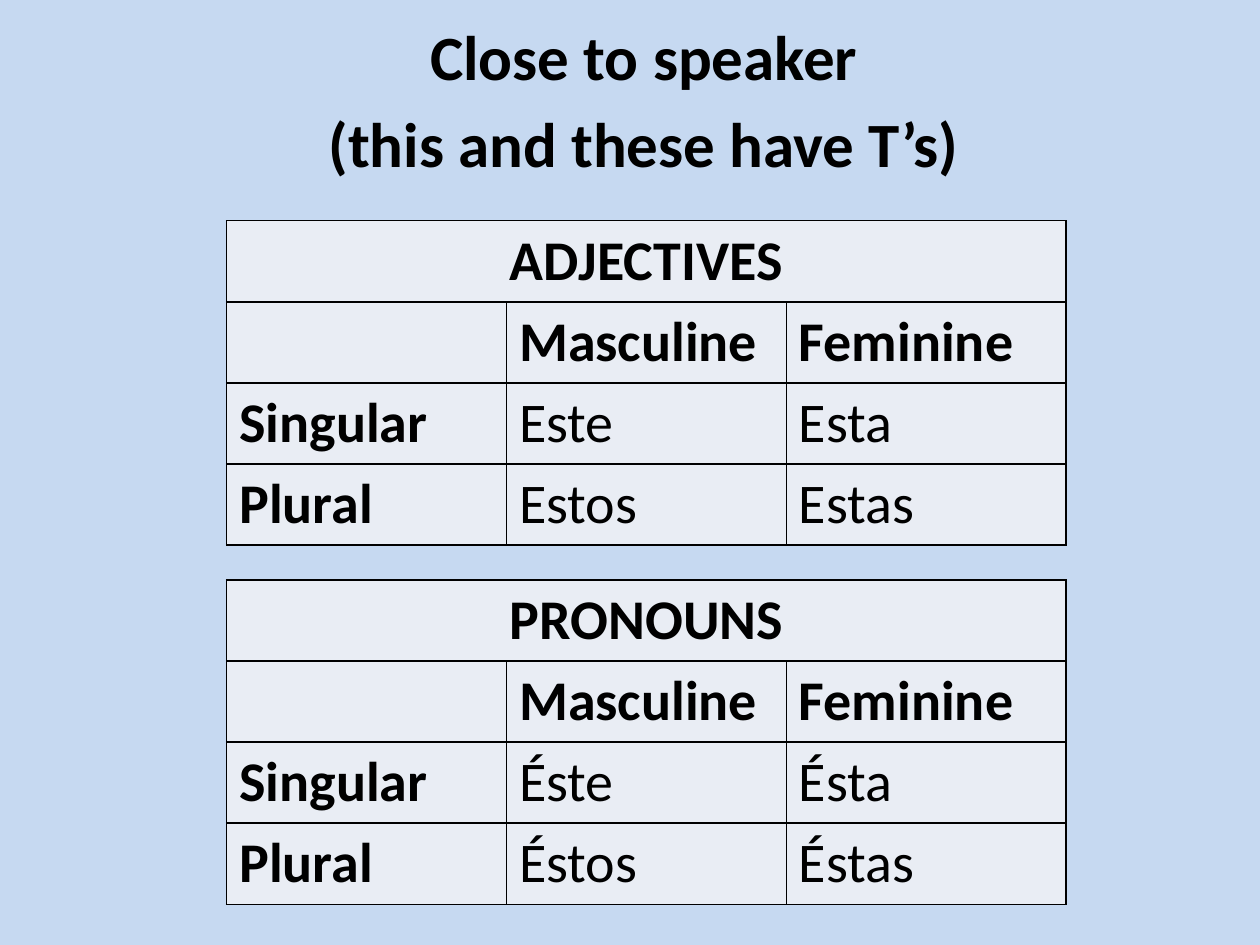
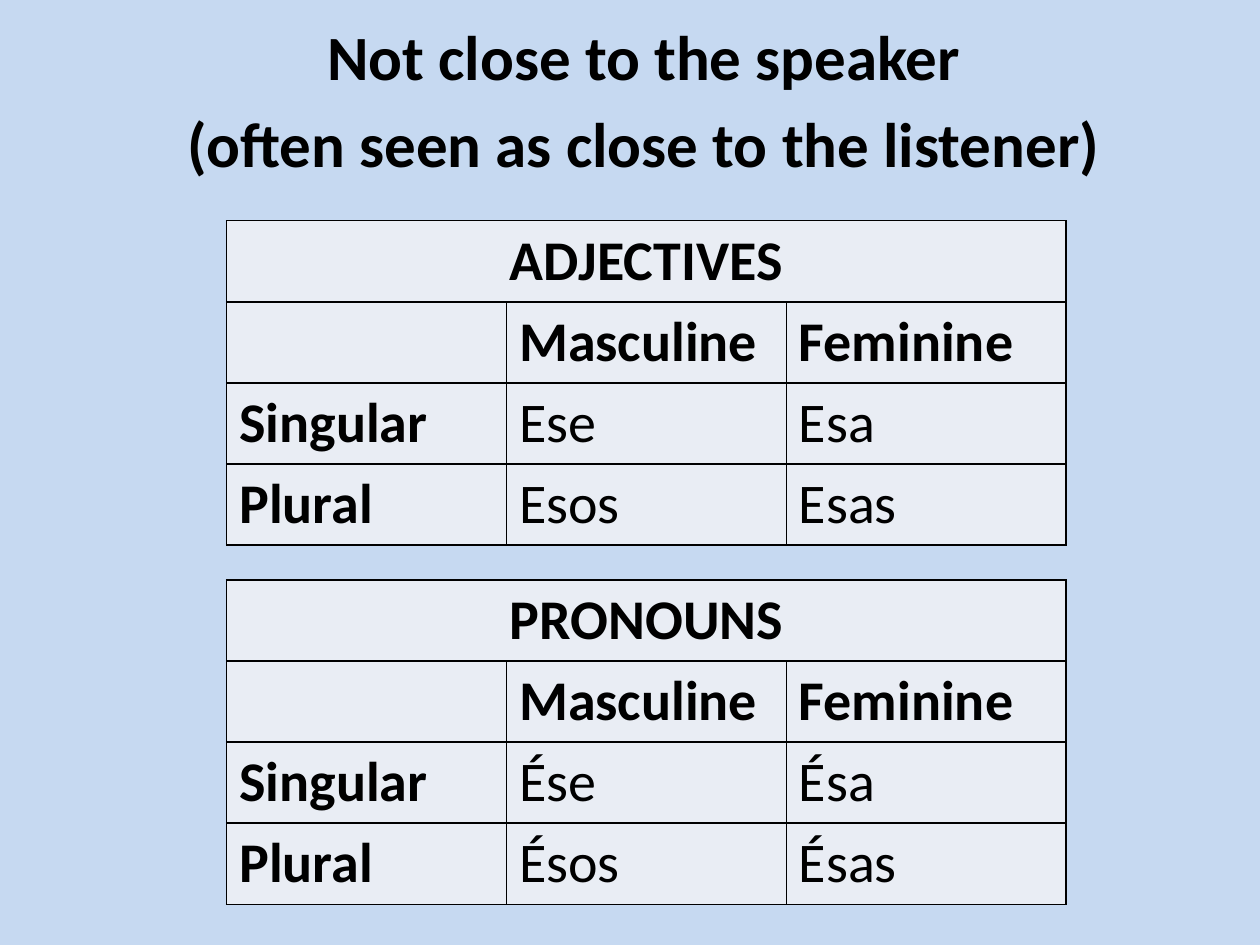
from lxml import etree
from pptx import Presentation
from pptx.dml.color import RGBColor
from pptx.enum.text import MSO_ANCHOR, MSO_AUTO_SIZE, PP_ALIGN
from pptx.oxml.ns import qn
from pptx.util import Cm, Pt

CENTER, LEFT = PP_ALIGN.CENTER, PP_ALIGN.LEFT
TOP = MSO_ANCHOR.TOP
NO_AUTOFIT = MSO_AUTO_SIZE.NONE

FONT = "Calibri"
SKY = RGBColor(0xC6, 0xD9, 0xF1)
CELL = RGBColor(0xE9, 0xED, 0xF4)
BLACK = RGBColor(0, 0, 0)

TITLE_ONLY = 5
TABLE_LEFT, TABLE_TOP, TABLE_STEP = Cm(4.57), Cm(4.45), Cm(7.24)
COL_WIDTH, ROW_HEIGHT = Cm(5.64), Cm(1.63)

# Title lines, then the singular and plural forms of each table
SLIDES = [
    (["Close to speaker", "(this and these have T’s)"],
     {"ADJECTIVES": [("Este", "Esta"), ("Estos", "Estas")],
      "PRONOUNS": [("Éste", "Ésta"), ("Éstos", "Éstas")]}),
    (["Not close to the speaker", "(often seen as close to the listener)"],
     {"ADJECTIVES": [("Ese", "Esa"), ("Esos", "Esas")],
      "PRONOUNS": [("Ése", "Ésa"), ("Ésos", "Ésas")]}),
]


def write(tf, *lines, size=32, bold=False, align=LEFT, gap=0):
    """Fill a text frame with one paragraph per line."""
    for i, line in enumerate(lines):
        p = tf.add_paragraph() if i else tf.paragraphs[0]
        p.alignment = align
        p.space_before = Pt(0)
        p.space_after = Pt(gap)
        r = p.add_run()
        r.text = line
        r.font.name = FONT
        r.font.size = Pt(size)
        r.font.bold = bold
        r.font.color.rgb = BLACK


def add_title(s, lines):
    sp = s.shapes.title
    sp.left, sp.top, sp.width, sp.height = Cm(0.56), Cm(0.23), Cm(24.84), Cm(4.24)
    tf = sp.text_frame
    tf.word_wrap = True
    tf.auto_size = NO_AUTOFIT
    tf.vertical_anchor = TOP
    write(tf, *lines, size=36, bold=True, align=CENTER, gap=6.5)


def style_cell(cell):
    """Give a cell its fill and a thin black border on every side."""
    tc_pr = cell._tc.get_or_add_tcPr()
    for side in ("lnL", "lnR", "lnT", "lnB"):
        ln = etree.SubElement(tc_pr, qn(f"a:{side}"), w=str(Pt(1)))
        fill = etree.SubElement(ln, qn("a:solidFill"))
        etree.SubElement(fill, qn("a:srgbClr"), val=str(BLACK))
    cell.fill.solid()
    cell.fill.fore_color.rgb = CELL


def add_forms_table(s, top, heading, forms):
    singular, plural = forms
    rows = [(heading, "", ""),
            ("", "Masculine", "Feminine"),
            ("Singular", *singular),
            ("Plural", *plural)]
    n_rows, n_cols = len(rows), len(rows[0])
    table = s.shapes.add_table(n_rows, n_cols, TABLE_LEFT, top,
                               COL_WIDTH * n_cols, ROW_HEIGHT * n_rows).table
    table.first_row = table.horz_banding = False
    table.cell(0, 0).merge(table.cell(0, n_cols - 1))
    for i, row in enumerate(rows):
        for j, text in enumerate(row):
            cell = table.cell(i, j)
            style_cell(cell)
            if text:
                write(cell.text_frame, text, bold=i < 2 or j == 0,
                      align=LEFT if i else CENTER)


def main():
    prs = Presentation()
    prs.slide_width, prs.slide_height = Cm(25.4), Cm(19.05)
    background = prs.slide_master.background.fill
    background.solid()
    background.fore_color.rgb = SKY

    for title_lines, tables in SLIDES:
        s = prs.slides.add_slide(prs.slide_layouts[TITLE_ONLY])
        add_title(s, title_lines)
        for i, (heading, forms) in enumerate(tables.items()):
            add_forms_table(s, TABLE_TOP + i * TABLE_STEP, heading, forms)
    prs.save("out.pptx")


if __name__ == "__main__":
    main()
